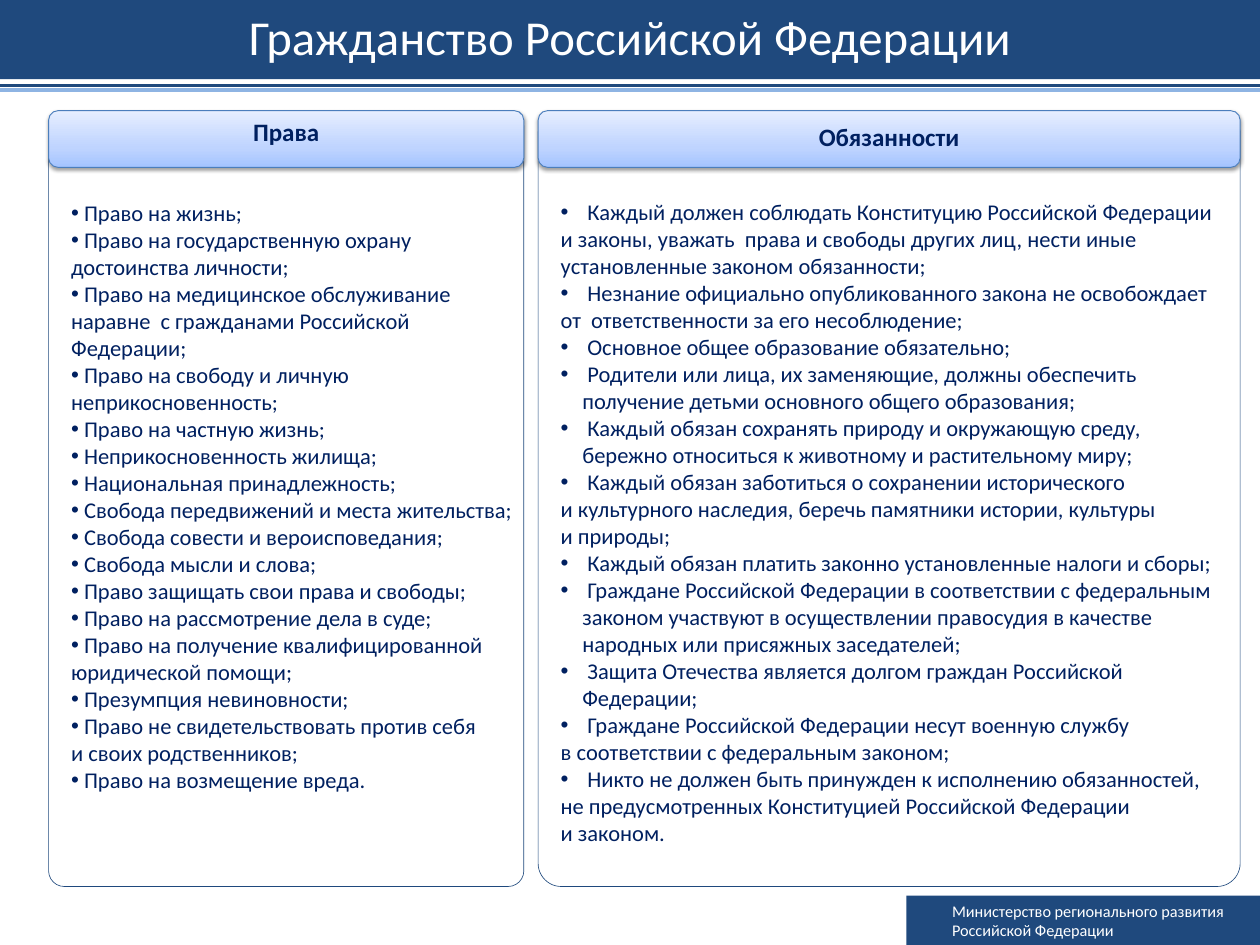
from copy import deepcopy

from lxml import etree
from pptx import Presentation
from pptx.dml.color import RGBColor
from pptx.enum.shapes import MSO_CONNECTOR, MSO_SHAPE
from pptx.enum.text import MSO_ANCHOR, MSO_AUTO_SIZE, PP_ALIGN
from pptx.oxml.ns import qn
from pptx.util import Inches, Pt

RECTANGLE, ROUNDED = MSO_SHAPE.RECTANGLE, MSO_SHAPE.ROUNDED_RECTANGLE
STRAIGHT = MSO_CONNECTOR.STRAIGHT
MIDDLE, TOP = MSO_ANCHOR.MIDDLE, MSO_ANCHOR.TOP
CENTER, LEFT = PP_ALIGN.CENTER, PP_ALIGN.LEFT
TWO_CONTENT = 3
FONT = "Calibri"
COLORS = {
    "navy": "1F497D", "sky": "8EB4E3", "ink": "002060", "white": "FFFFFF",
    "header_line": "4B7EBC", "shadow": "000000",
}
HEADER_STOPS = [(0, "A4C4FF"), (0.35, "BFD4FF"), (1, "E6EEFF")]
PANEL_TOP, PANEL_HEIGHT, HEADER_HEIGHT = 1.23, 8.62, 0.63

# Each item is a bullet followed by its unbulleted continuation lines.
RIGHTS = [
    ("Право на жизнь;",),
    ("Право на государственную охрану достоинства личности;",),
    ("Право на медицинское обслуживание наравне  с гражданами Российской Федерации;",),
    ("Право на свободу и личную неприкосновенность;",),
    ("Право на частную жизнь;",),
    ("Неприкосновенность жилища;",),
    ("Национальная принадлежность;",),
    ("Свобода передвижений и места жительства;",),
    ("Свобода совести и вероисповедания;",),
    ("Свобода мысли и слова;",),
    ("Право защищать свои права и свободы;",),
    ("Право на рассмотрение дела в суде;",),
    ("Право на получение квалифицированной юридической помощи;",),
    ("Презумпция невиновности;",),
    ("Право не свидетельствовать против себя", "и своих родственников;"),
    ("Право на возмещение вреда.",),
]
DUTIES = [
    ("Каждый должен соблюдать Конституцию Российской Федерации",
     "и законы, уважать  права и свободы других лиц, нести иные "
     "установленные законом обязанности;"),
    ("Незнание официально опубликованного закона не освобождает",
     "от  ответственности за его несоблюдение;"),
    ("Основное общее образование обязательно;",),
    ("Родители или лица, их заменяющие, должны обеспечить "
     "получение детьми основного общего образования;",),
    ("Каждый обязан сохранять природу и окружающую среду, "
     "бережно относиться к животному и растительному миру;",),
    ("Каждый обязан заботиться о сохранении исторического",
     "и культурного наследия, беречь памятники истории, культуры",
     "и природы;"),
    ("Каждый обязан платить законно установленные налоги и сборы;",),
    ("Граждане Российской Федерации в соответствии с федеральным законом "
     "участвуют в осуществлении правосудия в качестве народных или "
     "присяжных заседателей;",),
    ("Защита Отечества является долгом граждан Российской Федерации;",),
    ("Граждане Российской Федерации несут военную службу",
     "в соответствии с федеральным законом;"),
    ("Никто не должен быть принужден к исполнению обязанностей,",
     "не предусмотренных Конституцией Российской Федерации",
     "и законом."),
]


def color(name):
    return RGBColor.from_string(COLORS[name])


def place(shape, left, top, width, height):
    shape.left, shape.top = Inches(left), Inches(top)
    shape.width, shape.height = Inches(width), Inches(height)


def style(paragraph, size, color_name, align=LEFT, bold=False, spacing=None):
    paragraph.alignment = align
    paragraph.space_before = Pt(0)
    if spacing:
        paragraph.line_spacing = Pt(spacing)
    font = paragraph.font
    font.name, font.size, font.bold = FONT, Pt(size), bold
    font.color.rgb = color(color_name)


def set_indent(paragraph, margin, first_line=0):
    properties = paragraph._p.get_or_add_pPr()
    properties.set("marL", str(Inches(margin)))
    properties.set("indent", str(Inches(first_line)))
    return properties


def set_bullet(paragraph, bulleted, hanging):
    if bulleted:
        properties = set_indent(paragraph, hanging, -hanging)
        etree.SubElement(properties, qn("a:buFont"), typeface="Arial")
        etree.SubElement(properties, qn("a:buChar"), char="•")
    else:
        etree.SubElement(set_indent(paragraph, 0), qn("a:buNone"))


def add_box(slide, kind, left, top, width, height):
    box = slide.shapes.add_shape(
        kind, Inches(left), Inches(top), Inches(width), Inches(height))
    box.shadow.inherit = False
    return box


def add_rule(slide, top, color_name):
    rule = slide.shapes.add_connector(
        STRAIGHT, 0, Inches(top), Inches(14), Inches(top))
    rule.line.color.rgb = color(color_name)
    rule.line.width = Pt(3)
    etree.SubElement(rule._element.spPr, qn("a:effectLst"))


def fill_title(title, text):
    place(title, 0, 0, 14, 0.88)
    title.fill.solid()
    title.fill.fore_color.rgb = color("navy")
    frame = title.text_frame
    frame.auto_size, frame.vertical_anchor = MSO_AUTO_SIZE.NONE, MIDDLE
    frame.text = text
    style(frame.paragraphs[0], 39, "white", CENTER, spacing=40.6)


def fill_header_gradient(header):
    header.fill.gradient()
    header.fill.gradient_angle = 90
    stops = header._element.spPr.find(".//" + qn("a:gsLst"))
    stops.append(deepcopy(stops[0]))
    for stop, (position, value) in zip(header.fill.gradient_stops, HEADER_STOPS):
        stop.position = position
        stop.color.rgb = RGBColor.from_string(value)


def add_soft_shadow(shape):
    effects = shape._element.spPr.find(qn("a:effectLst"))
    shadow = etree.SubElement(
        effects, qn("a:outerShdw"), blurRad="40000", dist="20000",
        dir="5400000", rotWithShape="0")
    tint = etree.SubElement(shadow, qn("a:srgbClr"), val=COLORS["shadow"])
    etree.SubElement(tint, qn("a:alpha"), val="38000")


def add_panel(slide, left, width, heading, spacing):
    """Add an outlined panel with a shaded heading bar."""
    outline = add_box(slide, ROUNDED, left, PANEL_TOP, width, PANEL_HEIGHT)
    outline.adjustments[0] = 0.033
    outline.fill.background()
    outline.line.color.rgb = color("navy")
    outline.line.width = Pt(0.5)

    header = add_box(slide, ROUNDED, left, PANEL_TOP, width, HEADER_HEIGHT)
    fill_header_gradient(header)
    header.line.color.rgb = color("header_line")
    header.line.width = Pt(0.75)
    add_soft_shadow(header)
    frame = header.text_frame
    frame.margin_left = frame.margin_right = 0
    frame.vertical_anchor = MIDDLE
    frame.text = heading
    style(frame.paragraphs[0], 20, "ink", CENTER, True, spacing)


def fill_list(body, items, hanging):
    frame = body.text_frame
    frame.auto_size, frame.vertical_anchor = MSO_AUTO_SIZE.NONE, TOP
    lines = [(text, index == 0) for item in items for index, text in enumerate(item)]
    for number, (text, bulleted) in enumerate(lines):
        paragraph = frame.add_paragraph() if number else frame.paragraphs[0]
        paragraph.text = " " + text if bulleted else text
        set_bullet(paragraph, bulleted, hanging)
        style(paragraph, 18, "ink")


def add_footer(slide, lines):
    footer = add_box(slide, RECTANGLE, 10.07, 9.95, 3.93, 0.55)
    footer.fill.solid()
    footer.fill.fore_color.rgb = color("navy")
    footer.line.fill.background()
    frame = footer.text_frame
    frame.vertical_anchor = MIDDLE
    for number, text in enumerate(lines):
        paragraph = frame.add_paragraph() if number else frame.paragraphs[0]
        paragraph.text = text
        set_indent(paragraph, 0.41)
        style(paragraph, 13, "white")


def main():
    deck = Presentation()
    deck.slide_width, deck.slide_height = Inches(14), Inches(10.5)
    slide = deck.slides.add_slide(deck.slide_layouts[TWO_CONTENT])
    title, rights, duties = slide.placeholders

    fill_title(title, "Гражданство Российской Федерации")
    add_rule(slide, 0.95, "navy")
    add_rule(slide, 1, "sky")
    add_panel(slide, 0.54, 5.28, "Права", 12)
    add_panel(slide, 5.98, 7.8, "Обязанности", 19.6)
    place(rights, 0.69, 2.16, 5.28, 7.5)
    fill_list(rights, RIGHTS, 0)
    place(duties, 6.13, 2.15, 7.56, 7.5)
    fill_list(duties, DUTIES, 0.24)
    add_footer(slide, ["Министерство регионального развития", "Российской Федерации"])
    deck.save("out.pptx")


if __name__ == "__main__":
    main()
